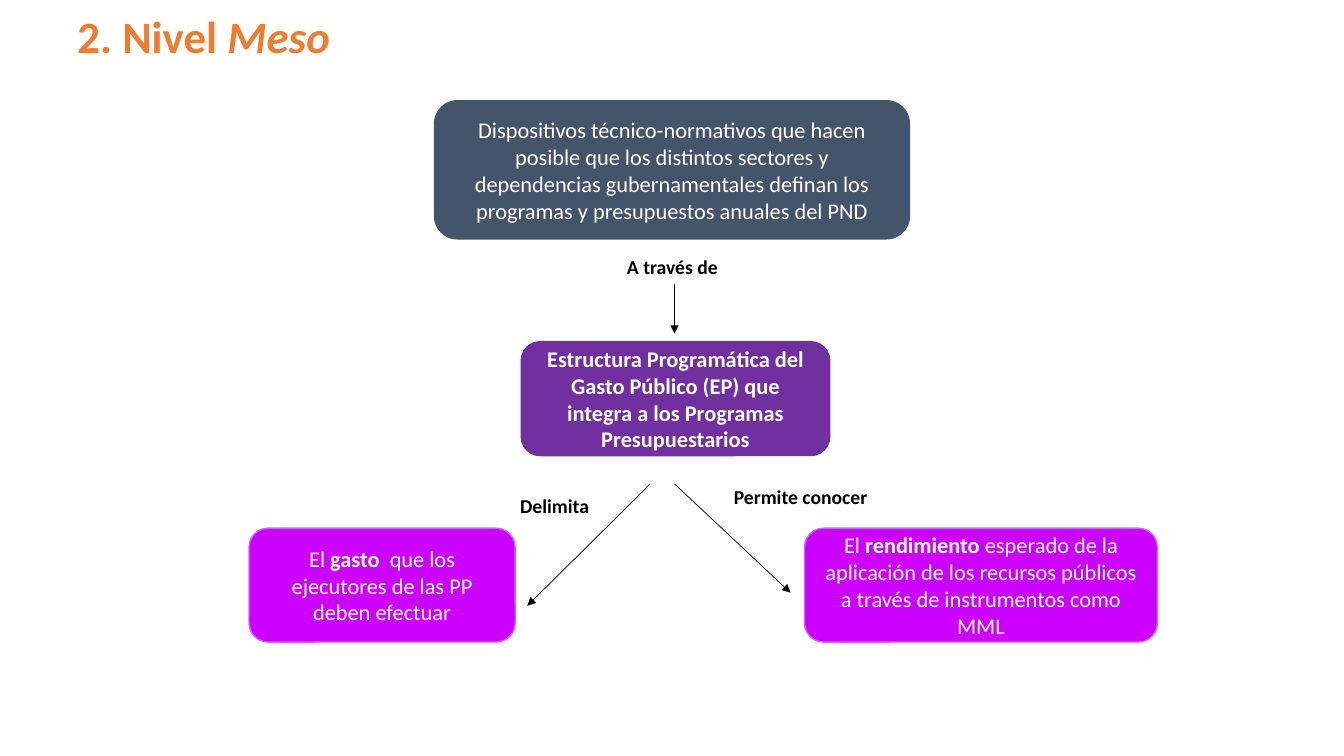
from dataclasses import dataclass

from lxml.etree import SubElement
from pptx import Presentation
from pptx.dml.color import RGBColor as Rgb
from pptx.enum.shapes import MSO_CONNECTOR as Connector, MSO_SHAPE as Shape
from pptx.enum.text import MSO_ANCHOR as Anchor, MSO_AUTO_SIZE as AutoSize, PP_ALIGN as Align
from pptx.oxml.ns import qn
from pptx.util import Emu, Pt

PX = 9144  # EMU per px, 100 px to the inch


@dataclass(frozen=True)
class Theme:
    font: str = "Calibri"
    title_size: int = 32
    box_size: int = 16
    label_size: int = 14
    title: str = "ED7D31"
    light: str = "FFFFFF"
    dark: str = "000000"
    slate: str = "44546A"
    purple: str = "7030A0"
    magenta: str = "CC00FF"
    magenta_edge: str = "CC66FF"


THEME = Theme()


def px(*lengths):
    return [Emu(length * PX) for length in lengths]


def color(code):
    return Rgb.from_string(code)


def write(paragraph, parts, size, ink):
    """Write (text, bold, italic) parts as runs of one paragraph."""
    for text, bold, italic in parts:
        run = paragraph.add_run()
        run.text = text
        font = run.font
        font.name, font.size = THEME.font, Pt(size)
        font.bold, font.italic = bold, italic
        font.color.rgb = color(ink)


def add_box(slide, place, parts, fill, edge):
    box = slide.shapes.add_shape(Shape.ROUNDED_RECTANGLE, *px(*place))
    box.shadow.inherit = False
    box.fill.solid()
    box.fill.fore_color.rgb = color(fill)
    box.line.color.rgb = color(edge)
    box.line.width = Pt(1)
    frame = box.text_frame
    frame.word_wrap = True
    frame.vertical_anchor = Anchor.MIDDLE
    frame.paragraphs[0].alignment = Align.CENTER
    write(frame.paragraphs[0], parts, THEME.box_size, THEME.light)


def add_text(slide, place, parts, size, ink):
    frame = slide.shapes.add_textbox(*px(*place)).text_frame
    frame.word_wrap = True
    write(frame.paragraphs[0], parts, size, ink)
    return frame


def add_label(slide, place, text):
    frame = add_text(slide, place, [(text, True, False)], THEME.label_size, THEME.dark)
    frame.auto_size = AutoSize.SHAPE_TO_FIT_TEXT


def add_arrow(slide, start, end):
    arrow = slide.shapes.add_connector(Connector.STRAIGHT, *px(*start, *end))
    arrow.line.color.rgb = color(THEME.dark)
    arrow.line.width = Pt(0.5)
    SubElement(arrow.line._get_or_add_ln(), qn("a:tailEnd"), type="triangle")
    SubElement(arrow._element.spPr, qn("a:effectLst"))


def main():
    deck = Presentation()
    deck.slide_width, deck.slide_height = px(1333, 750)
    slide = deck.slides.add_slide(deck.slide_layouts[6])

    # Title
    heading = add_text(slide, (67, 10, 1181, 144),
                       [("2. Nivel ", True, False), ("Meso", True, True)],
                       THEME.title_size, THEME.title)
    heading.paragraphs[0].line_spacing = 0.9

    # Instruments and programme structure
    add_box(slide, (431, 100, 471, 137),
            [("Dispositivos técnico-normativos que hacen posible que los distintos "
              "sectores y dependencias gubernamentales definan los programas y "
              "presupuestos anuales del PND", False, False)],
            THEME.slate, THEME.slate)
    add_box(slide, (517, 339, 306, 113),
            [("Estructura Programática del Gasto Público (EP) que integra a los "
              "Programas Presupuestarios", True, False)],
            THEME.purple, THEME.purple)

    # Outcomes: spending and performance
    outcome_top, outcome_height = 524, 113
    outcomes = [
        (247, 264, "gasto", "  que los ejecutores de las PP deben efectuar"),
        (798, 350, "rendimiento", " esperado de la aplicación de los recursos "
                                  "públicos a través de instrumentos como MML"),
    ]
    for left, width, keyword, rest in outcomes:
        add_box(slide, (left, outcome_top, width, outcome_height),
                [("El ", False, False), (keyword, True, False), (rest, False, False)],
                THEME.magenta, THEME.magenta_edge)

    # Relations: label place, label, arrow start, arrow end
    relations = [
        ((612, 248, 129, 34), "A través de", (669, 282), (669, 331)),
        ((506, 485, 100, 34), "Delimita", (645, 480), (523, 601)),
        ((718, 476, 184, 34), "Permite conocer", (669, 480), (784, 588)),
    ]
    for place, text, start, end in relations:
        add_label(slide, place, text)
        add_arrow(slide, start, end)

    deck.save("out.pptx")


if __name__ == "__main__":
    main()
